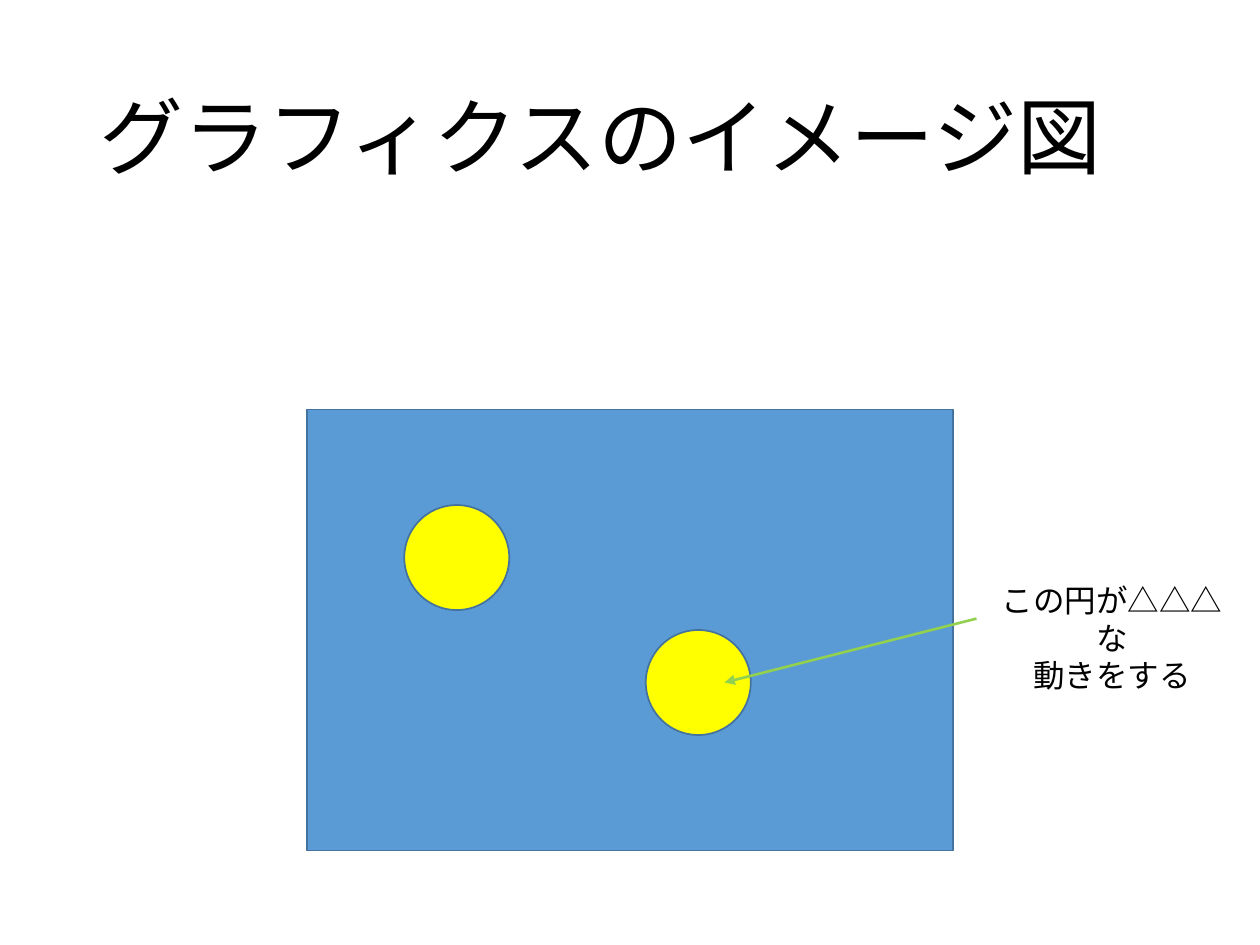
from lxml import etree
from pptx import Presentation
from pptx.dml.color import RGBColor
from pptx.enum.shapes import MSO_CONNECTOR, MSO_SHAPE
from pptx.enum.text import MSO_ANCHOR, MSO_AUTO_SIZE, PP_ALIGN
from pptx.oxml.ns import qn
from pptx.util import Pt

BLACK = RGBColor(0x00, 0x00, 0x00)
BLUE = RGBColor(0x5B, 0x9B, 0xD5)
OUTLINE_BLUE = RGBColor(0x43, 0x73, 0x9E)
YELLOW = RGBColor(0xFF, 0xFF, 0x00)
GREEN = RGBColor(0x92, 0xD0, 0x50)

RECTANGLE = MSO_SHAPE.RECTANGLE
CIRCLE = MSO_SHAPE.OVAL
STRAIGHT = MSO_CONNECTOR.STRAIGHT
LEFT = PP_ALIGN.LEFT
CENTER = PP_ALIGN.CENTER
MIDDLE = MSO_ANCHOR.MIDDLE
NO_AUTOFIT = MSO_AUTO_SIZE.NONE
GROW = MSO_AUTO_SIZE.SHAPE_TO_FIT_TEXT

FONT = "Calibri"
CIRCLE_SIZE = 60
CIRCLE_CORNERS = [(231, 288.6), (369, 360)]


def write_paragraph(paragraph, text, size, alignment):
    paragraph.alignment = alignment
    run = paragraph.add_run()
    run.text = text
    run.font.name = FONT
    run.font.size = Pt(size)
    run.font.color.rgb = BLACK


def set_title(slide, text):
    title = slide.shapes.title
    title.left, title.top = Pt(49.5), Pt(28.75)
    title.width, title.height = Pt(621), Pt(104.4)
    frame = title.text_frame
    frame.auto_size = NO_AUTOFIT
    frame.vertical_anchor = MIDDLE
    frame.paragraphs[0].line_spacing = 0.9
    write_paragraph(frame.paragraphs[0], text, 48, LEFT)


def add_figure(slide, kind, left, top, width, height, fill):
    figure = slide.shapes.add_shape(kind, Pt(left), Pt(top), Pt(width), Pt(height))
    figure.shadow.inherit = False
    figure.fill.solid()
    figure.fill.fore_color.rgb = fill
    figure.line.color.rgb = OUTLINE_BLUE
    figure.line.width = Pt(1)


def add_caption(slide, left, top, width, height, lines):
    caption = slide.shapes.add_textbox(Pt(left), Pt(top), Pt(width), Pt(height))
    frame = caption.text_frame
    frame.word_wrap = True
    frame.auto_size = GROW
    for index, line in enumerate(lines):
        paragraph = frame.add_paragraph() if index else frame.paragraphs[0]
        write_paragraph(paragraph, line, 18, CENTER)


def add_arrow(slide, start, end):
    arrow = slide.shapes.add_connector(STRAIGHT, *map(Pt, start + end))
    arrow.line.color.rgb = GREEN
    arrow.line.width = Pt(1.5)
    etree.SubElement(arrow.line._get_or_add_ln(), qn("a:tailEnd"), type="triangle")
    etree.SubElement(arrow._element.spPr, qn("a:effectLst"))


def main():
    presentation = Presentation()
    presentation.slide_width, presentation.slide_height = Pt(720), Pt(540)
    slide = presentation.slides.add_slide(presentation.slide_layouts[5])
    set_title(slide, "グラフィクスのイメージ図")
    add_figure(slide, RECTANGLE, 175.5, 234, 369, 252, BLUE)
    for left, top in CIRCLE_CORNERS:
        add_figure(slide, CIRCLE, left, top, CIRCLE_SIZE, CIRCLE_SIZE, YELLOW)
    add_caption(slide, 558, 328.3, 154.8, 51, ["この円が△△△な", "動きをする"])
    add_arrow(slide, (558, 353.5), (414, 390))
    presentation.save("out.pptx")


if __name__ == "__main__":
    main()
